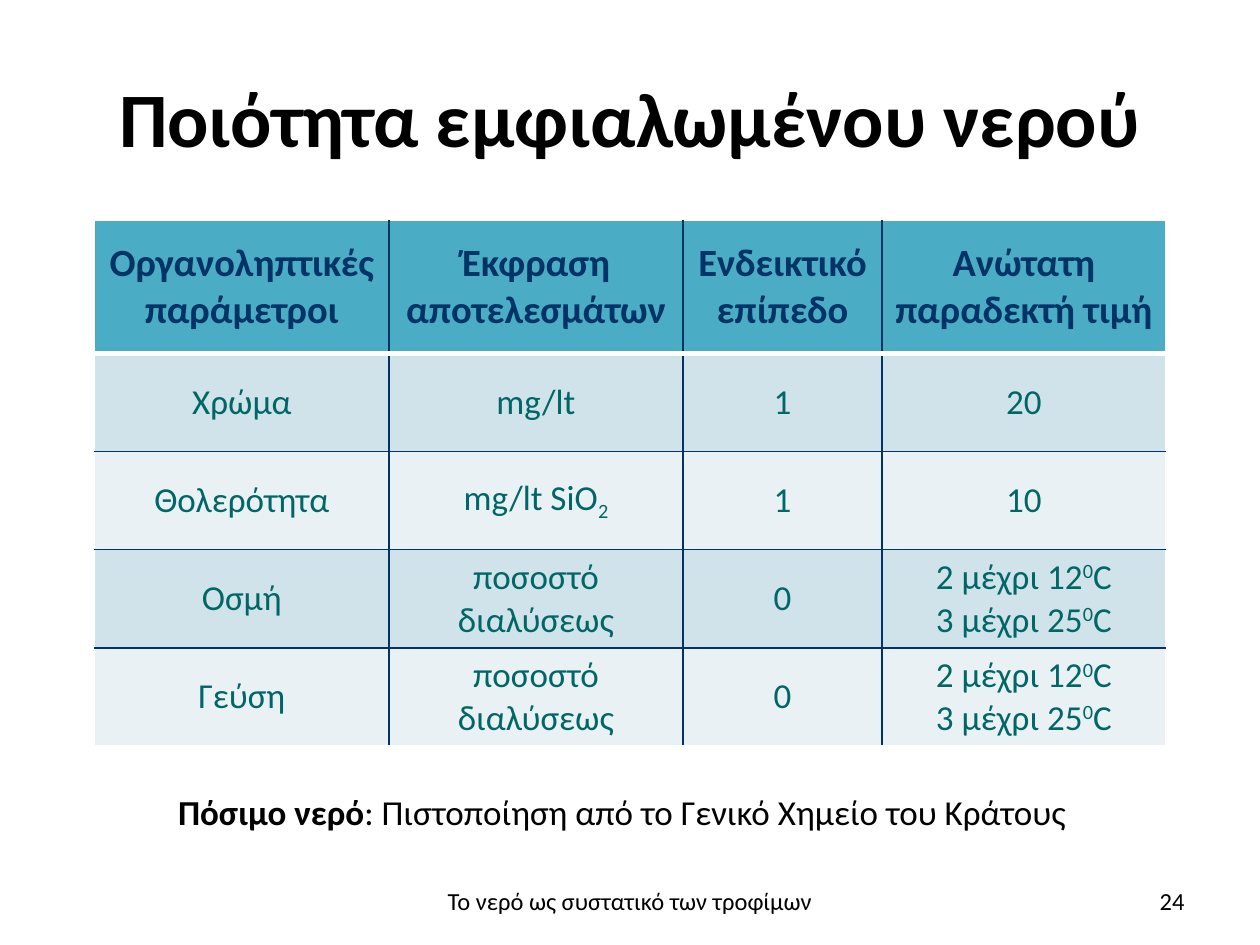
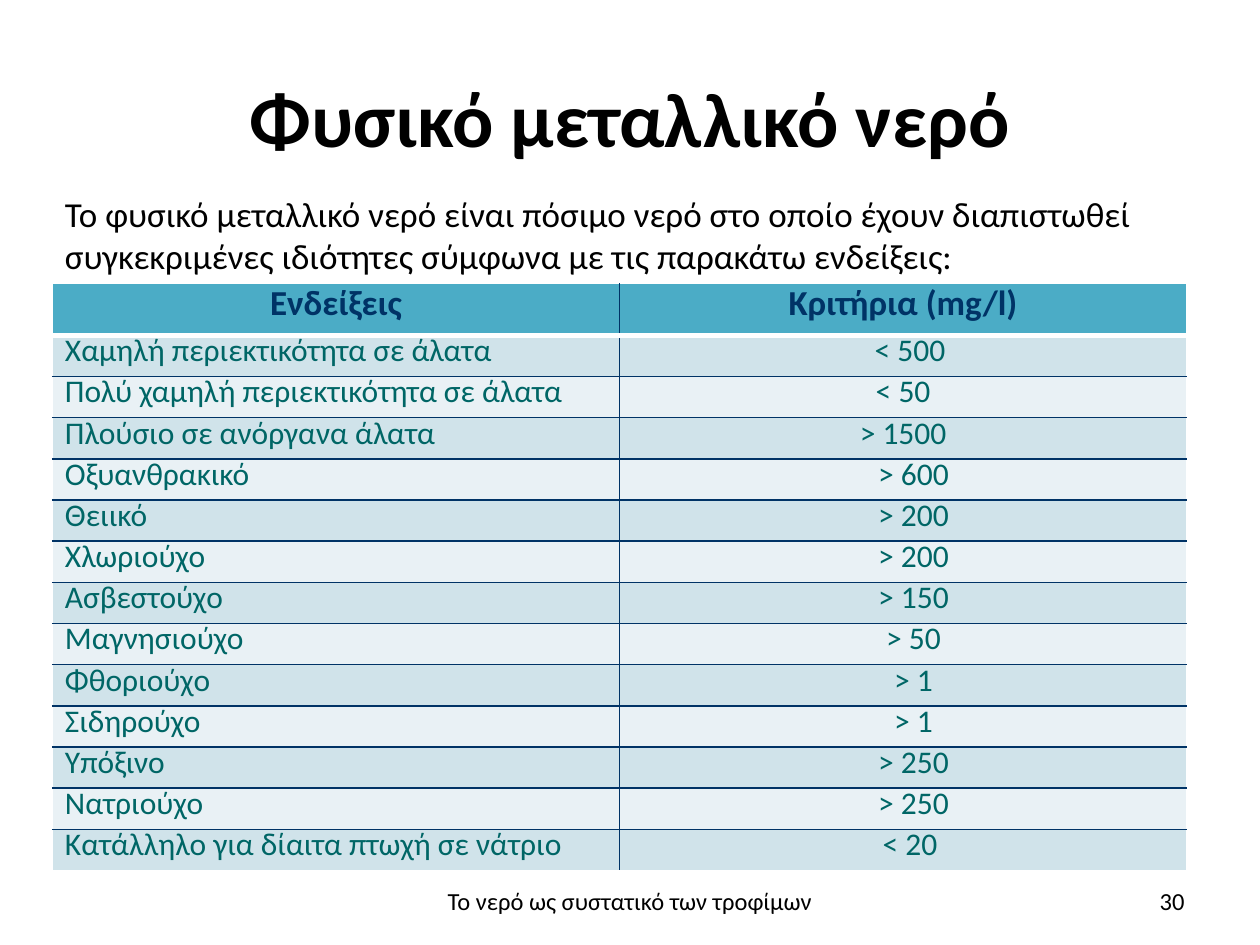
from lxml import etree
from pptx import Presentation
from pptx import util as u
from pptx.dml.color import RGBColor
from pptx.enum import text
from pptx.oxml import ns

# Shared look
FONT = "Calibri"
BLACK, WHITE, NAVY, GREEN = "000000", "FFFFFF", "003366", "006666"
HEADER_FILL, BANDS = "4BACC6", ("D0E3EA", "E9F1F5")
LEFT, CENTER, RIGHT = text.PP_ALIGN.LEFT, text.PP_ALIGN.CENTER, text.PP_ALIGN.RIGHT
TOP, MIDDLE = text.MSO_ANCHOR.TOP, text.MSO_ANCHOR.MIDDLE
FOOTER = "Το νερό ως συστατικό των τροφίμων"

# Content: a text is a list of paragraphs, a paragraph is a list of (run, format)
PLAIN, BOLD = {}, {"bold": True}
SUB, SUPER = {"baseline": -25}, {"baseline": 30}
LIMITS = [[(f"{level} μέχρι {degrees}", PLAIN), ("0", SUPER), ("C", PLAIN)]
          for level, degrees in ((2, 12), (3, 25))]

bottled = {
    "title": "Ποιότητα εμφιαλωμένου νερού",
    "number": "24",
    "header": ["Οργανοληπτικές παράμετροι", "Έκφραση αποτελεσμάτων",
               "Ενδεικτικό επίπεδο", "Ανώτατη παραδεκτή τιμή"],
    "rows": [
        ["Χρώμα", "mg/lt", "1", "20"],
        ["Θολερότητα", [[("mg/lt SiO", PLAIN), ("2", SUB)]], "1", "10"],
        ["Οσμή", "ποσοστό διαλύσεως", "0", LIMITS],
        ["Γεύση", "ποσοστό διαλύσεως", "0", LIMITS],
    ],
}
certification = [[("Πόσιμο νερό", BOLD),
                  (": Πιστοποίηση από το Γενικό Χημείο του Κράτους", PLAIN)]]

mineral = {
    "title": "Φυσικό μεταλλικό νερό",
    "number": "30",
    "header": ["Ενδείξεις", "Κριτήρια (mg/l)"],
    "rows": [
        ["Χαμηλή περιεκτικότητα σε άλατα", "< 500"],
        ["Πολύ χαμηλή περιεκτικότητα σε άλατα", "< 50"],
        ["Πλούσιο σε ανόργανα άλατα", "> 1500"],
        ["Οξυανθρακικό", "> 600"],
        ["Θειικό", "> 200"],
        ["Χλωριούχο", "> 200"],
        ["Ασβεστούχο", "> 150"],
        ["Μαγνησιούχο", "> 50"],
        ["Φθοριούχο", "> 1"],
        ["Σιδηρούχο", "> 1"],
        ["Υπόξινο", "> 250"],
        ["Νατριούχο", "> 250"],
        ["Κατάλληλο για δίαιτα πτωχή σε νάτριο", "< 20"],
    ],
}
definition = ("Το φυσικό μεταλλικό νερό είναι πόσιμο νερό στο οποίο έχουν διαπιστωθεί "
              "συγκεκριμένες ιδιότητες σύμφωνα με τις παρακάτω ενδείξεις:")
# Extra left margin (cm) of the criteria: 0.42, but less in these rows
CRITERIA_SHIFT, SHIFT_EXCEPTIONS = 0.42, {1: 0.28, 2: 0, 3: 0, 13: 0.28}


def color(value):
    return RGBColor.from_string(value)


def write(frame, content, size=20, ink=BLACK, bold=False, align=LEFT, spacing=None):
    """Fill a text frame with a string or a list of paragraphs."""
    if isinstance(content, str):
        content = [[(content, PLAIN)]]
    for i, runs in enumerate(content):
        paragraph = frame.paragraphs[0] if i == 0 else frame.add_paragraph()
        paragraph.alignment = align
        if spacing:
            paragraph.line_spacing = spacing
        for words, form in runs:
            run = paragraph.add_run()
            run.text = words
            run.font.name, run.font.size = FONT, u.Pt(size)
            run.font.bold = form.get("bold", bold)
            run.font.color.rgb = color(ink)
            if "baseline" in form:
                run.font._element.set("baseline", str(form["baseline"] * 1000))


def add_text(slide, box, content, anchor=MIDDLE, right=0.25, **form):
    frame = slide.shapes.add_textbox(*map(u.Cm, box)).text_frame
    frame.word_wrap = True
    frame.vertical_anchor = anchor
    frame.margin_right = u.Cm(right)
    write(frame, content, **form)


def set_borders(cell, borders):
    """Borders are (colour, points) for left, right, top and bottom."""
    properties = cell._tc.get_or_add_tcPr()
    for i, (side, (ink, points)) in enumerate(zip("LRTB", borders)):
        line = etree.Element(ns.qn(f"a:ln{side}"), w=str(u.Pt(points)))
        fill = etree.SubElement(line, ns.qn("a:solidFill"))
        etree.SubElement(fill, ns.qn("a:srgbClr"), val=ink)
        properties.insert(i, line)


def add_table(slide, corner, widths, header_height, row_height, content,
              header_size, body_size, aligns, side_margin=0.25, spacing=None):
    """Blue header over banded rows: navy inner lines, white outer lines."""
    rows = [content["header"]] + content["rows"]
    heights = [header_height] + [row_height] * len(content["rows"])
    table = slide.shapes.add_table(len(rows), len(widths), *map(
        u.Cm, (*corner, sum(widths), sum(heights)))).table
    table.horz_banding = False
    for column, width in zip(table.columns, widths):
        column.width = u.Cm(width)
    last_row, last_column = len(rows) - 1, len(widths) - 1
    inner, outer = (NAVY, 1), (WHITE, 1)
    for r, (row, height) in enumerate(zip(rows, heights)):
        table.rows[r].height = u.Cm(height)
        for c, words in enumerate(row):
            cell = table.cell(r, c)
            cell.vertical_anchor = MIDDLE
            cell.margin_left = cell.margin_right = u.Cm(side_margin)
            cell.fill.solid()
            cell.fill.fore_color.rgb = color(BANDS[(r - 1) % 2] if r else HEADER_FILL)
            bottom = (WHITE, 3) if r == 0 else outer if r == last_row else inner
            set_borders(cell, (outer if c == 0 else inner,
                               outer if c == last_column else inner,
                               outer if r < 2 else inner, bottom))
            write(cell.text_frame, words, spacing=spacing, bold=r == 0,
                  size=body_size if r else header_size, ink=GREEN if r else NAVY,
                  align=aligns[c] if r else CENTER)
    return table


def add_slide(content):
    """Blank slide with the shared title, footer and number."""
    slide = deck.slides.add_slide(deck.slide_layouts[6])
    add_text(slide, (1.27, 0.76, 22.86, 3.18), content["title"],
             size=44, bold=True, align=CENTER)
    add_text(slide, (8.68, 17.65, 8.04, 1.02), FOOTER, size=14, align=CENTER)
    add_text(slide, (18.2, 17.65, 5.93, 1.02), content["number"], size=14, align=RIGHT)
    return slide


deck = Presentation()
deck.slide_width, deck.slide_height = u.Cm(25.4), u.Cm(19.05)

# Bottled water
slide = add_slide(bottled)
add_table(slide, (1.91, 4.45), (5.93, 5.93, 4.01, 5.72), 2.67, 1.98, bottled,
          header_size=22, body_size=20, aligns=[CENTER] * 4, side_margin=0.18)
add_text(slide, (1.91, 15.8, 21.59, 1.11), certification, align=CENTER, right=0.57)

# Natural mineral water
slide = add_slide(mineral)
add_text(slide, (1.06, 3.76, 22.86, 1.96), definition, anchor=TOP)
criteria = add_table(slide, (1.06, 5.72), (11.43, 11.43), 1.04, 0.83, mineral,
                     header_size=20, body_size=18, aligns=[LEFT, CENTER], spacing=0.5)
for r in range(1, len(mineral["rows"]) + 1):
    shift = SHIFT_EXCEPTIONS.get(r, CRITERIA_SHIFT)
    criteria.cell(r, 1).margin_left = u.Cm(0.25 + shift)

deck.save("out.pptx")
